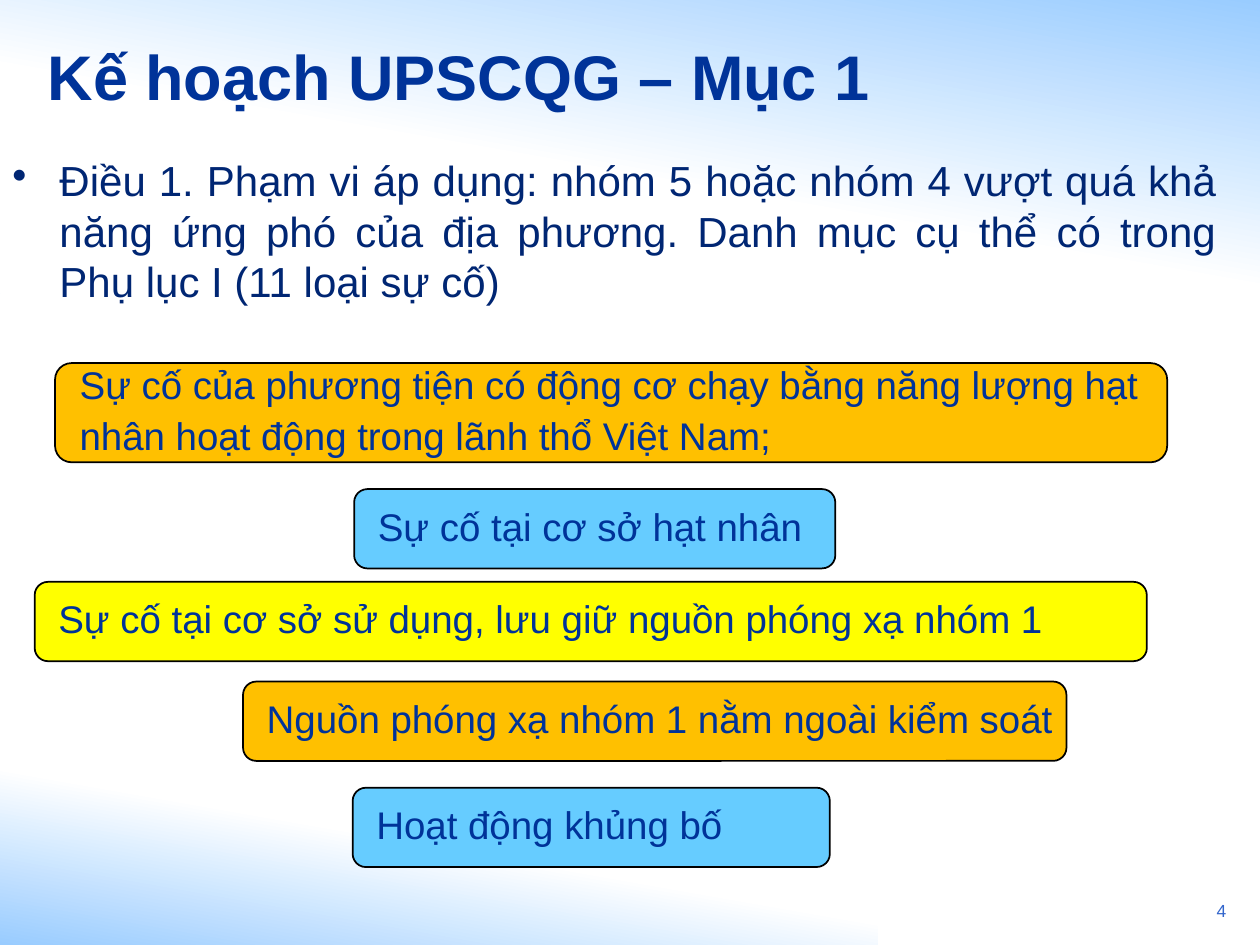
from dataclasses import dataclass

from lxml import etree
from pptx import Presentation
from pptx.dml.color import RGBColor
from pptx.enum.shapes import MSO_SHAPE
from pptx.enum.text import MSO_ANCHOR, PP_ALIGN
from pptx.oxml.ns import qn
from pptx.util import Cm, Pt

RECTANGLE, ROUNDED = MSO_SHAPE.RECTANGLE, MSO_SHAPE.ROUNDED_RECTANGLE
TOP, MIDDLE = MSO_ANCHOR.TOP, MSO_ANCHOR.MIDDLE
LEFT, RIGHT, JUSTIFY = PP_ALIGN.LEFT, PP_ALIGN.RIGHT, PP_ALIGN.JUSTIFY


@dataclass(frozen=True)
class Theme:
    font: str = "Arial"
    title_size: int = 36
    body_size: int = 24
    card_size: int = 22
    number_size: int = 10
    blue: str = "003399"
    navy: str = "002673"
    number: str = "3366CC"
    sky: str = "99CCFF"
    white: str = "FFFFFF"
    black: str = "000000"
    orange: str = "FFC000"
    aqua: str = "66CCFF"
    yellow: str = "FFFF00"


THEME = Theme()

# Content; positions are left, top, width, height in centimetres
TITLE = "Kế hoạch UPSCQG – Mục 1"
SCOPE = (
    "Điều 1. Phạm vi áp dụng: nhóm 5 hoặc nhóm 4 vượt quá khả năng ứng phó "
    "của địa phương. Danh mục cụ thể có trong Phụ lục I (11 loại sự cố)"
)
PAGE_NUMBER = "4"
CARD_HEIGHT = 1.6
INCIDENTS = [  # left, top, width, height, fill, lines
    (1.11, 7.32, 22.42, 2.0, THEME.orange,
     ["Sự cố của phương tiện có động cơ chạy bằng năng lượng hạt",
      "nhân hoạt động trong lãnh thổ Việt Nam;"]),
    (7.14, 9.86, 9.7, CARD_HEIGHT, THEME.aqua, ["Sự cố tại cơ sở hạt nhân"]),
    (0.7, 11.73, 22.42, CARD_HEIGHT, THEME.yellow,
     ["Sự cố tại cơ sở sử dụng, lưu giữ nguồn phóng xạ nhóm 1"]),
    (4.9, 13.74, 16.6, CARD_HEIGHT, THEME.orange,
     ["Nguồn phóng xạ nhóm 1 nằm ngoài kiểm soát"]),
    (7.11, 15.88, 9.62, CARD_HEIGHT, THEME.aqua, ["Hoạt động khủng bố"]),
]
GLOWS = [  # position, share of the fade to white, turned half round
    ((0, 14.73, 17.7, 4.32), 0.48, True),
    ((0, 0, 25.4, 5.92), 0.56, False),
]


def color(value):
    return RGBColor.from_string(value)


def style(para, size, ink, align=LEFT, bold=False):
    para.alignment = align
    font = para.font
    font.name, font.size, font.bold = THEME.font, Pt(size), bold
    font.color.rgb = color(ink)


def indent(para, margin, first=0):
    props = para._p.get_or_add_pPr()
    props.set("marL", str(Cm(margin)))
    props.set("indent", str(Cm(first)))
    return props


def add_shape(page, kind, place):
    shape = page.shapes.add_shape(kind, *map(Cm, place))
    shape.shadow.inherit = False
    return shape


def add_glow(page, place, fade, turned):
    glow = add_shape(page, RECTANGLE, place)
    glow.line.fill.background()
    glow.fill.gradient()
    glow.fill.gradient_angle = 260
    stops = zip(glow.fill.gradient_stops, (0, fade), (THEME.sky, THEME.white))
    for stop, position, tint in stops:
        stop.position = position
        stop.color.rgb = color(tint)
    if turned:
        frame = glow._element.spPr.find(qn("a:xfrm"))
        frame.set("flipH", "1")
        frame.set("flipV", "1")


def add_text(page, place, text, anchor=TOP):
    box = page.shapes.add_textbox(*map(Cm, place))
    box.text_frame.word_wrap = True
    box.text_frame.vertical_anchor = anchor
    para = box.text_frame.paragraphs[0]
    para.text = text
    return para


def add_card(page, left, top, width, height, fill, lines):
    card = add_shape(page, ROUNDED, (left, top, width, height))
    card.adjustments[0] = 0.167
    card.fill.solid()
    card.fill.fore_color.rgb = color(fill)
    card.line.color.rgb = color(THEME.black)
    card.line.width = Pt(1)
    frame = card.text_frame
    frame.word_wrap = False
    frame.vertical_anchor = MIDDLE
    for index, line in enumerate(lines):
        para = frame.add_paragraph() if index else frame.paragraphs[0]
        para.text = line
        para.level = 1
        indent(para, 0.15)
        para.line_spacing = 0.9
        para.space_before = Pt(5 if index else 0)
        style(para, THEME.card_size, THEME.blue, JUSTIFY)


def main():
    deck = Presentation()
    deck.slide_width, deck.slide_height = Cm(25.4), Cm(19.05)
    page = deck.slides.add_slide(deck.slide_layouts[6])

    # Background
    for glow in GLOWS:
        add_glow(page, *glow)

    # Page number and title
    number = add_text(page, (23.55, 18.01, 1.42, 0.81), PAGE_NUMBER)
    style(number, THEME.number_size, THEME.number, RIGHT)
    title = add_text(page, (0.71, 0.33, 18.8, 2.39), TITLE, MIDDLE)
    style(title, THEME.title_size, THEME.blue, bold=True)

    # Scope of the plan
    scope = add_text(page, (0, 3, 24.77, 15.01), SCOPE)
    bullet = etree.SubElement(indent(scope, 0.95, -0.95), qn("a:buChar"))
    bullet.set("char", "•")
    style(scope, THEME.body_size, THEME.navy, JUSTIFY)

    # Kinds of incident
    for incident in INCIDENTS:
        add_card(page, *incident)

    deck.save("out.pptx")


if __name__ == "__main__":
    main()
